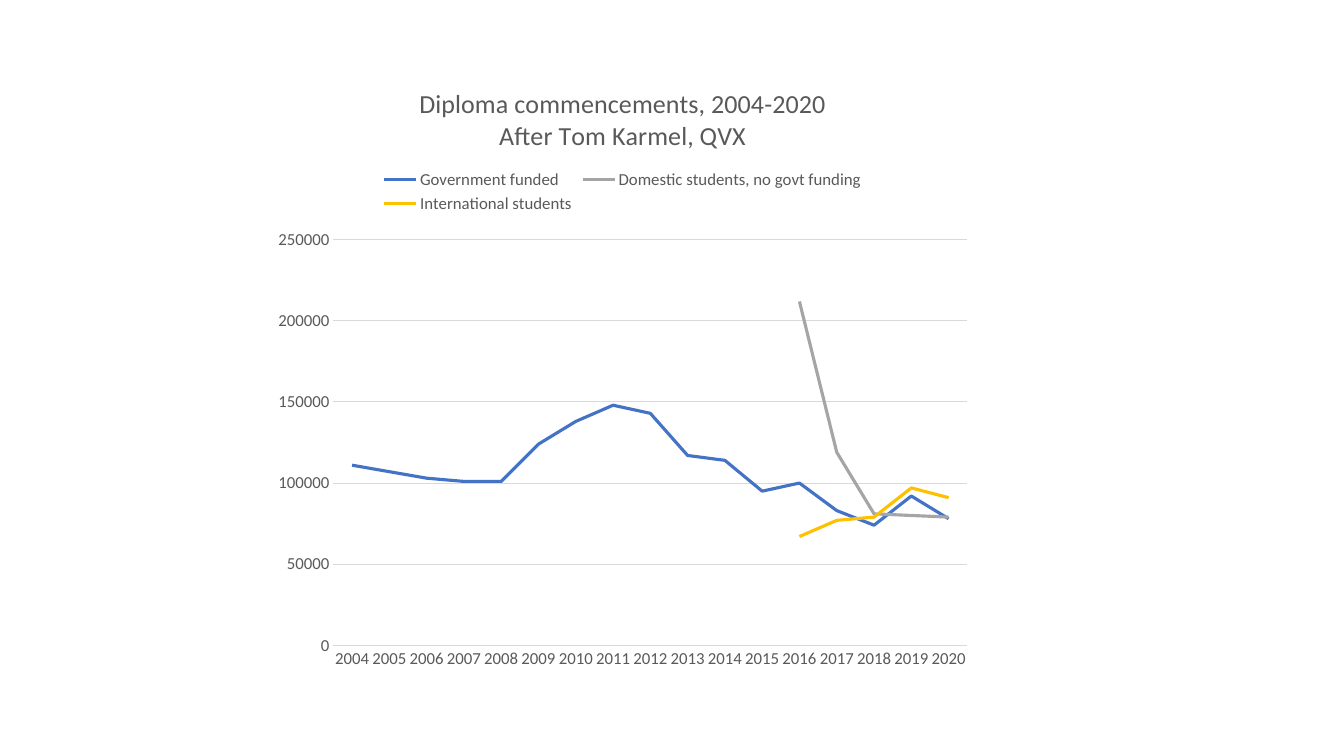
from pptx import Presentation
from pptx.chart.data import CategoryChartData
from pptx.dml.color import RGBColor
from pptx.enum.chart import XL_CHART_TYPE as ChartType, XL_LEGEND_POSITION as LegendPosition
from pptx.enum.chart import XL_TICK_MARK as TickMark
from pptx.util import Pt

TEXT_GREY = "595959"
LINE_GREY = "D9D9D9"


def style_font(font, size):
    for name, value in {"name": "Calibri", "size": Pt(size), "bold": False}.items():
        setattr(font, name, value)
    font.color.rgb = RGBColor.from_string(TEXT_GREY)


def style_line(line, color, width):
    line.color.rgb = RGBColor.from_string(color)
    line.width = Pt(width)


prs = Presentation()
prs.slide_width, prs.slide_height = Pt(960), Pt(540)
slide = prs.slides.add_slide(prs.slide_layouts[6])

# Commencements in thousands; the split of fee payers starts in 2016
years = range(2004, 2021)
commencements = {
    "Government funded": (
        "4472C4",
        [111, 107, 103, 101, 101, 124, 138, 148, 143, 117, 114, 95, 100, 83, 74, 92, 78],
    ),
    "Domestic students, no govt funding": ("A5A5A5", [212, 119, 81, 80, 79]),
    "International students": ("FFC000", [67, 77, 79, 97, 91]),
}

chart_data = CategoryChartData()
chart_data.categories = [str(year) for year in years]
for group, (color, thousands) in commencements.items():
    missing = [None] * (len(years) - len(thousands))
    chart_data.add_series(group, missing + [value * 1000 for value in thousands])

chart = slide.shapes.add_chart(
    ChartType.LINE, Pt(188.6), Pt(46.8), Pt(512.6), Pt(440), chart_data
).chart
style_font(chart.font, 12)

# Title
chart.has_title = True
title = chart.chart_title.text_frame
title.text = "Diploma commencements, 2004-2020\nAfter Tom Karmel, QVX"
for paragraph in title.paragraphs:
    style_font(paragraph.runs[0].font, 18.6)

# Legend
chart.has_legend = True
chart.legend.position = LegendPosition.TOP
chart.legend.include_in_layout = False
style_font(chart.legend.font, 12)

# Axes
year_axis, count_axis = chart.category_axis, chart.value_axis
for axis in (year_axis, count_axis):
    axis.major_tick_mark = axis.minor_tick_mark = TickMark.NONE
    style_font(axis.tick_labels.font, 12)
style_line(year_axis.format.line, LINE_GREY, 0.75)

count_axis_format = {
    "minimum_scale": 0,
    "maximum_scale": 250000,
    "major_unit": 50000,
    "has_major_gridlines": True,
}
for name, value in count_axis_format.items():
    setattr(count_axis, name, value)
count_axis.format.line.fill.background()
style_line(count_axis.major_gridlines.format.line, LINE_GREY, 0.75)

# Series
chart.plots[0].vary_by_categories = False
for series, (color, thousands) in zip(chart.plots[0].series, commencements.values()):
    series.smooth = False
    style_line(series.format.line, color, 2.25)

prs.save("out.pptx")
